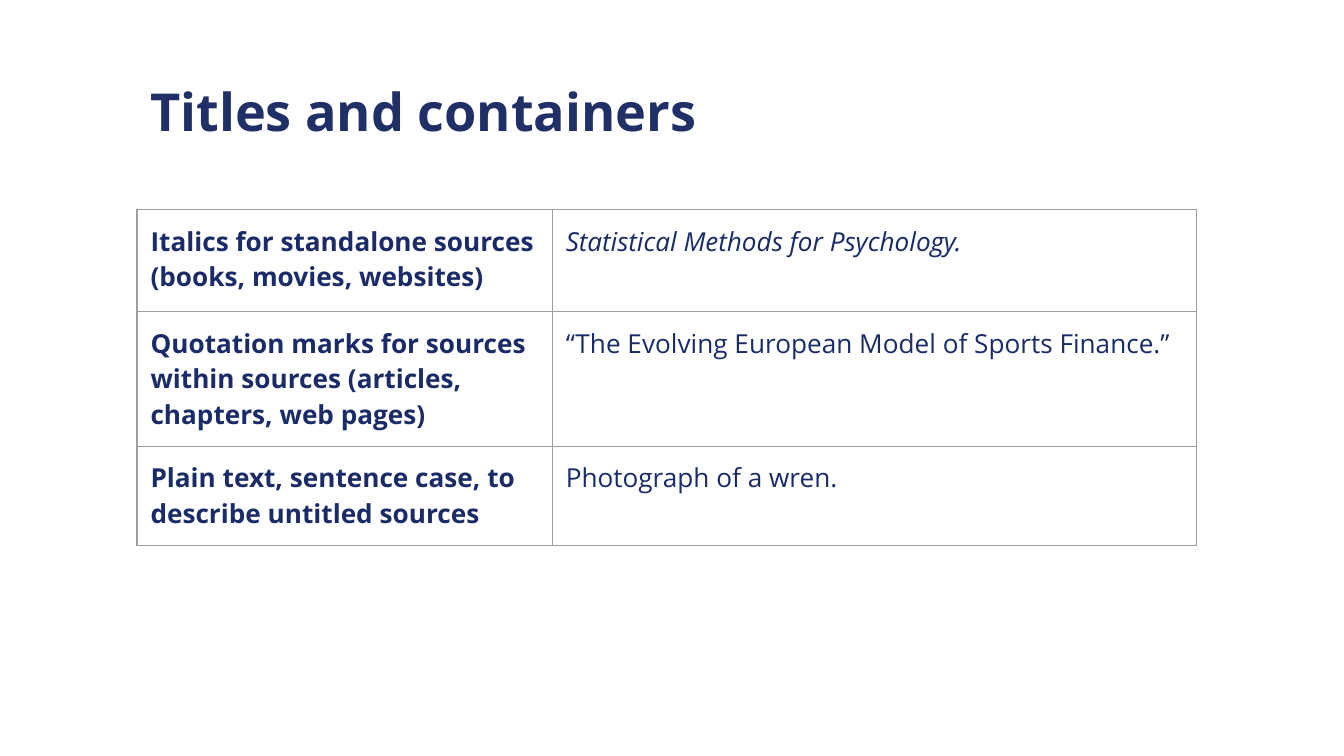
from dataclasses import dataclass

from lxml import etree
from pptx import Presentation
from pptx.dml.color import RGBColor
from pptx.enum.text import MSO_ANCHOR
from pptx.oxml.ns import qn
from pptx.util import Inches, Pt

TOP = MSO_ANCHOR.TOP
BLANK = 6


@dataclass(frozen=True)
class Theme:
    font: str = "Open Sans"
    head: str = "202F66"
    body: str = "1B2B68"
    rule: str = "9E9E9E"
    head_size: float = 28
    body_size: float = 14
    rule_size: float = 0.75
    inset: float = 0.1


class Deck:
    def __init__(self, slide, theme):
        self.slide = slide
        self.theme = theme

    def run(self, para, text, size, color, bold=False, italic=False):
        run = para.add_run()
        run.text = text
        font = run.font
        font.name = self.theme.font
        font.size = Pt(size)
        font.color.rgb = RGBColor.from_string(color)
        font.bold = bold
        font.italic = italic

    def pad(self, item):
        inset = Inches(self.theme.inset)
        item.margin_left = item.margin_right = inset
        item.margin_top = item.margin_bottom = inset
        item.vertical_anchor = TOP

    def title(self, text, left, top, width, height):
        box = self.slide.shapes.add_textbox(
            Inches(left), Inches(top), Inches(width), Inches(height))
        frame = box.text_frame
        frame.word_wrap = True
        self.pad(frame)
        self.run(frame.paragraphs[0], text,
                 self.theme.head_size, self.theme.head, bold=True)

    def border(self, cell):
        props = cell._tc.get_or_add_tcPr()
        for side in ("a:lnL", "a:lnR", "a:lnT", "a:lnB"):
            line = etree.SubElement(props, qn(side), w=str(Pt(self.theme.rule_size)))
            fill = etree.SubElement(line, qn("a:solidFill"))
            etree.SubElement(fill, qn("a:srgbClr"), val=self.theme.rule)

    def table(self, rows, left, top, widths, heights):
        frame = self.slide.shapes.add_table(
            len(rows), len(widths), Inches(left), Inches(top),
            Inches(sum(widths)), Inches(sum(heights)))
        table = frame.table
        table.first_row = table.horz_banding = False
        for col, width in zip(table.columns, widths):
            col.width = Inches(width)
        for row, height, texts in zip(table.rows, heights, rows):
            row.height = Inches(height)
            for cell, (text, style) in zip(row.cells, texts):
                self.pad(cell)
                self.border(cell)
                cell.fill.background()
                self.run(cell.text_frame.paragraphs[0], text,
                         self.theme.body_size, self.theme.body, **style)


PLAIN = {}
BOLD = {"bold": True}
ITALIC = {"italic": True}

# Each row pairs a rule with its example
RULES = [
    [("Italics for standalone sources (books, movies, websites)", BOLD),
     ("Statistical Methods for Psychology.", ITALIC)],
    [("Quotation marks for sources within sources (articles, chapters, web pages)", BOLD),
     ("“The Evolving European Model of Sports Finance.”", PLAIN)],
    [("Plain text, sentence case, to describe untitled sources", BOLD),
     ("Photograph of a wren.", PLAIN)],
]


def main():
    prs = Presentation()
    # Widescreen, 16 to 9
    prs.slide_width = Inches(10)
    prs.slide_height = Inches(10) * 9 // 16
    deck = Deck(prs.slides.add_slide(prs.slide_layouts[BLANK]), Theme())

    # Heading
    deck.title("Titles and containers", 1.02, 0.49, 7.87, 0.63)

    # Table of rules
    deck.table(RULES, 1.02, 1.56, widths=(3.09, 4.79), heights=(0.76, 1, 0.74))

    prs.save("out.pptx")


if __name__ == "__main__":
    main()
